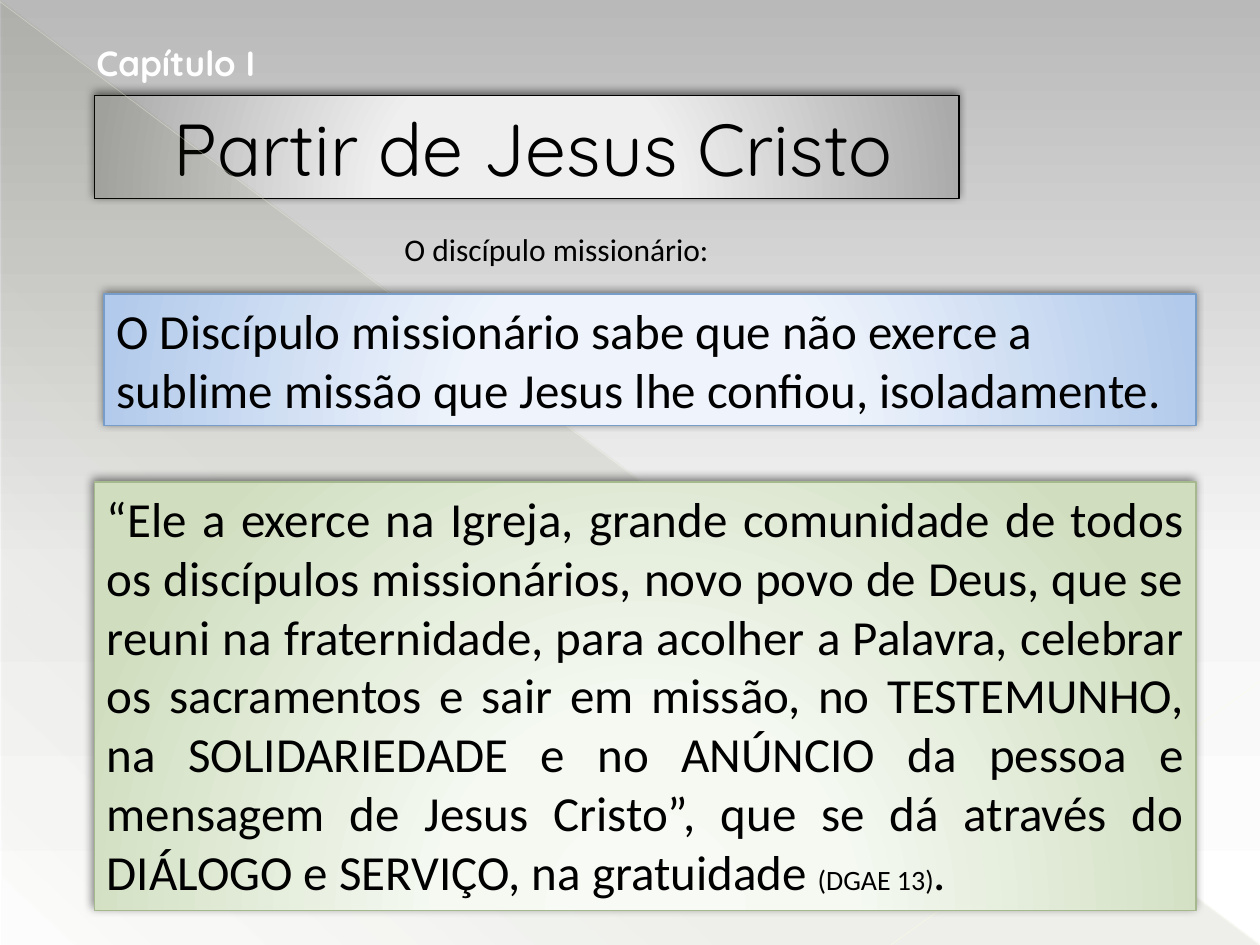
from lxml.etree import SubElement
from pptx import Presentation
from pptx.dml.color import RGBColor
from pptx.enum.shapes import MSO_CONNECTOR, MSO_SHAPE
from pptx.enum.text import MSO_ANCHOR, MSO_AUTO_SIZE, PP_ALIGN
from pptx.oxml.ns import qn
from pptx.util import Pt

BLACK = RGBColor(0x00, 0x00, 0x00)
WHITE = RGBColor(0xFF, 0xFF, 0xFF)
OLIVE = RGBColor(0x44, 0x4D, 0x26)
CREAM = RGBColor(0xFF, 0xFD, 0xE3)
BLUE = RGBColor(0x79, 0x9D, 0xC9)
GREEN = RGBColor(0xA5, 0xB8, 0x8E)
SKY = [(0, RGBColor(0xB9, 0xB9, 0xB9)), (60, RGBColor(0xF6, 0xF6, 0xF6)), (100, WHITE)]
VEIL = [(0, OLIVE, 10), (70, OLIVE, 8), (100, OLIVE, 1)]
GREYS = [(0, RGBColor(0xF2, 0xF2, 0xF2)), (34, RGBColor(0xEF, 0xEF, 0xEF)),
         (100, RGBColor(0xAA, 0xAA, 0xAA))]
BLUES = [(0, RGBColor(0xF2, 0xF7, 0xFE)), (34, RGBColor(0xEF, 0xF4, 0xFC)),
         (100, RGBColor(0xB2, 0xCA, 0xEB))]
GREENS = [(0, RGBColor(0xF8, 0xFB, 0xF5)), (34, RGBColor(0xF5, 0xF9, 0xF2)),
          (100, RGBColor(0xD0, 0xDE, 0xBF))]
HEAD, BODY = "Quicksand", "Calibri"


def node(root, tag, **attrs):
    """Add a drawing element with the given attributes."""
    return SubElement(root, qn(f"a:{tag}"), {k: str(v) for k, v in attrs.items()})


def tint(root, color, alpha=100):
    """Add a colour with its opacity in percent."""
    node(node(root, "srgbClr", val=color), "alpha", val=alpha * 1000)


def blend(owner, stops, angle=None):
    """Turn an empty fill into a linear gradient, or a radial one without angle."""
    old = owner.find(qn("a:noFill"))
    grad = node(owner, "gradFill", rotWithShape=1)
    owner.replace(old, grad)
    row = node(grad, "gsLst")
    for place, *color in stops:
        tint(node(row, "gs", pos=place * 1000), *color)
    if angle is None:
        ring = node(grad, "path", path="circle")
        node(ring, "fillToRect", l=50000, t=155000, r=50000, b=-55000)
    else:
        node(grad, "lin", ang=angle * 60000, scaled=0)


def panel(shape, stops, edge):
    """Give a box its radial fill, outline and soft shadow."""
    shape.fill.background()
    blend(shape.element.spPr, stops)
    shape.line.color.rgb = edge
    shape.line.width = Pt(0.75)
    shape.shadow.inherit = False
    glow = node(shape.element.spPr.find(qn("a:effectLst")), "outerShdw",
                blurRad=Pt(5), dist=Pt(2), dir=245 * 60000, rotWithShape=0)
    tint(glow, BLACK, 50)


def write(shape, *runs, font=BODY, size=28, color=BLACK, bold=False,
          align=PP_ALIGN.LEFT, anchor=MSO_ANCHOR.TOP, grow=True):
    """Fill a shape with one paragraph of runs, each a text or (text, size)."""
    frame = shape.text_frame
    frame.word_wrap = True
    frame.auto_size = MSO_AUTO_SIZE.SHAPE_TO_FIT_TEXT if grow else MSO_AUTO_SIZE.NONE
    frame.vertical_anchor = anchor
    para = frame.paragraphs[0]
    para.alignment = align
    for item in runs:
        text, points = (item, size) if isinstance(item, str) else item
        run = para.add_run()
        run.text = text
        run.font.name, run.font.size = font, Pt(points)
        run.font.bold, run.font.color.rgb = bold, color


def ray(slide, x1, y1, x2, y2, width, alpha):
    """Draw one thin translucent line."""
    line = slide.shapes.add_connector(
        MSO_CONNECTOR.STRAIGHT, Pt(x1), Pt(y1), Pt(x2), Pt(y2))
    line.line.color.rgb = CREAM
    line.line.width = Pt(width)
    node(line.element.spPr.find(".//" + qn("a:srgbClr")), "alpha", val=alpha * 1000)
    node(line.element.spPr, "effectLst")


def backdrop(slide, x, y, w, h):
    """Paint the sky, the corner triangle and the two rays."""
    slide.background.fill.background()
    blend(slide.element.find(".//" + qn("p:bgPr")), SKY, 90)
    veil = slide.shapes.add_shape(
        MSO_SHAPE.RIGHT_TRIANGLE, Pt(x + 1), Pt(y + 1), Pt(w - 1), Pt(h - 1))
    veil.fill.background()
    blend(veil.element.spPr, VEIL, 133)
    veil.line.fill.background()
    veil.shadow.inherit = False
    ray(slide, x, y + 1, x + w, y + h, 0.39, 35)
    ray(slide, x + w, y + 389.5, x + 509, y + h, 0.47, 45)


def heading(slide, x, y, w, h):
    """Place the chapter label above the framed title."""
    title = slide.shapes.title
    title.left, title.top, title.width, title.height = Pt(x), Pt(y), Pt(w), Pt(h)
    panel(title, GREYS, BLACK)
    write(title, "Partir de Jesus Cristo", font=HEAD, size=42,
          anchor=MSO_ANCHOR.MIDDLE, grow=False)
    title.text_frame.paragraphs[0]._p.get_or_add_pPr().set("marL", str(Pt(38)))
    label(slide, "Capítulo I", x - 6, y - 34.5, 136, 31.5,
          font=HEAD, size=20, color=WHITE, bold=True)


def label(slide, text, x, y, w, h, **style):
    """Place a line of free text."""
    write(slide.shapes.add_textbox(Pt(x), Pt(y), Pt(w), Pt(h)), text, **style)


def card(slide, runs, stops, edge, x, y, w, h, **style):
    """Place a shaded text box."""
    box = slide.shapes.add_shape(MSO_SHAPE.RECTANGLE, Pt(x), Pt(y), Pt(w), Pt(h))
    panel(box, stops, edge)
    write(box, *runs, **style)


def main():
    """Build the slide and save it."""
    deck = Presentation()
    deck.slide_width, deck.slide_height = Pt(720), Pt(540)
    slide = deck.slides.add_slide(deck.slide_layouts[5])
    backdrop(slide, 0, 0, 720, 540)
    heading(slide, 54, 54.5, 494, 59)
    card(slide, ["O Discípulo missionário sabe que não exerce a sublime missão "
                 "que Jesus lhe confiou, isoladamente."],
         BLUES, BLUE, 59.5, 168, 624, 75)
    label(slide, "O discípulo missionário:", 224, 128, 335, 29, size=18)
    card(slide, ["“Ele a exerce na Igreja, grande comunidade de todos os discípulos "
                 "missionários, novo povo de Deus, que se reuni na fraternidade, para "
                 "acolher a Palavra, celebrar os sacramentos e sair em missão, no "
                 "TESTEMUNHO, na SOLIDARIEDADE e no ANÚNCIO da pessoa e mensagem de "
                 "Jesus Cristo”, que se dá através do DIÁLOGO e SERVIÇO, na gratuidade ",
                 ("(DGAE 13)", 16), "."],
         GREENS, GREEN, 54, 275.5, 629.5, 245, align=PP_ALIGN.JUSTIFY)
    deck.save("out.pptx")


if __name__ == "__main__":
    main()
